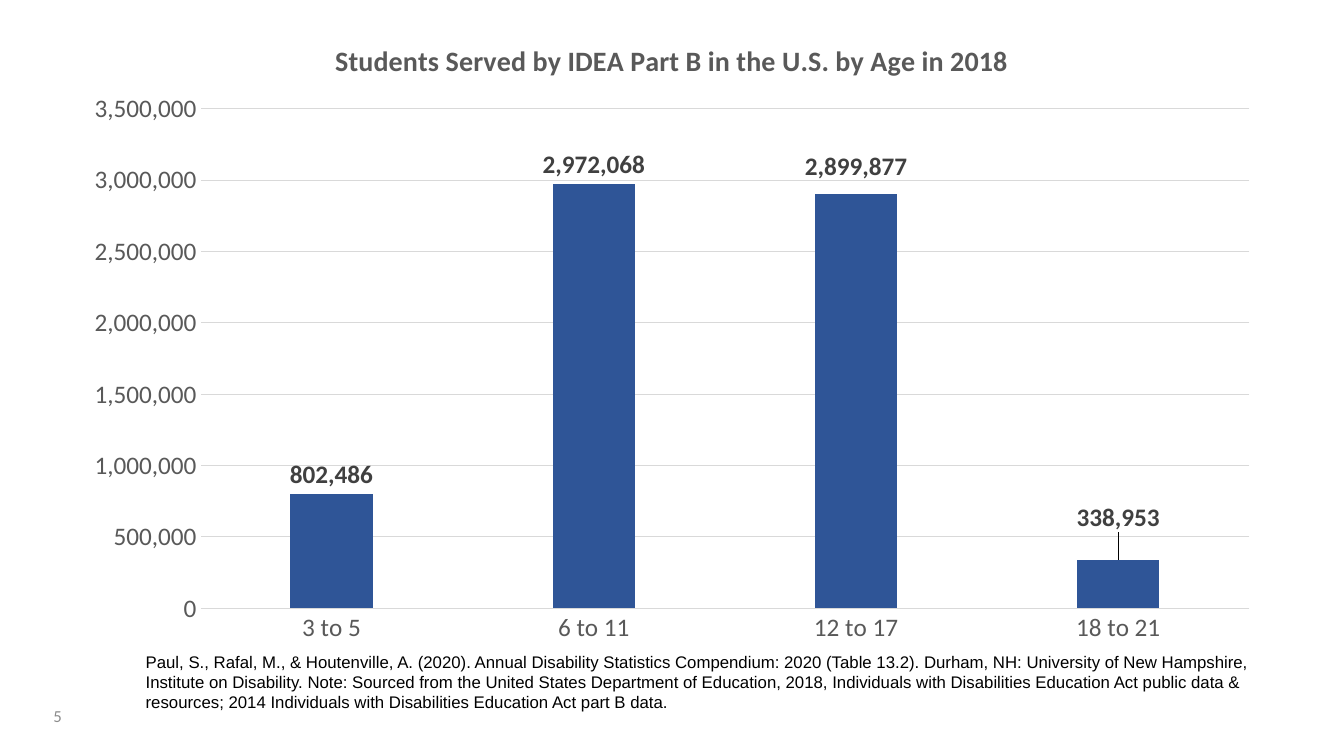
import pptx
import pptx.util
import pptx.dml.color
import pptx.chart.data
import pptx.enum.chart
import pptx.enum.text
import pptx.oxml
import pptx.oxml.ns

WIDE, HIGH = 13.33, 7.5
COLORS = {"bar": "2F5597", "grid": "D9D9D9", "axis": "595959",
          "label": "404040", "page": "8C8C8C", "note": "000000"}
AGES = ["3 to 5", "6 to 11", "12 to 17", "18 to 21"]
COUNTS = [802486, 2972068, 2899877, 338953]
LIFTS = {2: -0.014, 3: -0.036}  # extra label offsets, as shares of chart height
TITLE = "Students Served by IDEA Part B in the U.S. by Age in 2018"
NOTE = (
    "Paul, S., Rafal, M., & Houtenville, A. (2020). Annual Disability Statistics "
    "Compendium: 2020 (Table 13.2). Durham, NH: University of New Hampshire, "
    "Institute on Disability. Note: Sourced from the United States Department of "
    "Education, 2018, Individuals with Disabilities Education Act public data & "
    "resources; 2014 Individuals with Disabilities Education Act part B data.")


def color(name):
    return pptx.dml.color.RGBColor.from_string(COLORS[name])


def area(left, top, width, height):
    """Turn shares of the slide into lengths."""
    return [pptx.util.Inches(share * side) for share, side in
            zip((left, top, width, height), (WIDE, HIGH, WIDE, HIGH))]


def style(font, size, tint, bold=False, face="Calibri"):
    font.name, font.bold = face, bold
    font.size = pptx.util.Pt(size)
    font.color.rgb = color(tint)


def write(slide, text, box, size=12, tint="note", face="Arial",
          align="LEFT", anchor="TOP", after=0):
    frame = slide.shapes.add_textbox(*area(*box)).text_frame
    frame.word_wrap = True
    frame.vertical_anchor = getattr(pptx.enum.text.MSO_ANCHOR, anchor)
    para = frame.paragraphs[0]
    para.alignment = getattr(pptx.enum.text.PP_ALIGN, align)
    para.space_after = pptx.util.Pt(after)
    run = para.add_run()
    run.text = text
    style(run.font, size, tint, face=face)


def place(node, index, **parts):
    """Give a chart part a manual layout."""
    for old in node.findall(pptx.oxml.ns.qn("c:layout")):
        node.remove(old)
    tags = "".join(f'<c:{tag} val="{val}"/>' for tag, val in parts.items())
    node.insert(index, pptx.oxml.parse_xml(
        f'<c:layout {pptx.oxml.ns.nsdecls("c")}>'
        f'<c:manualLayout>{tags}</c:manualLayout></c:layout>'))


def rule(line):
    line.color.rgb = color("grid")
    line.width = pptx.util.Pt(0.75)


def set_axes(chart):
    none = pptx.enum.chart.XL_TICK_MARK.NONE
    for axis in (chart.category_axis, chart.value_axis):
        axis.major_tick_mark = axis.minor_tick_mark = none
        style(axis.tick_labels.font, 18, "axis")
    rule(chart.category_axis.format.line)
    axis = chart.value_axis
    axis.minimum_scale, axis.maximum_scale = 0, 3500000
    axis.major_unit = 500000
    axis.format.line.fill.background()
    rule(axis.major_gridlines.format.line)
    axis.tick_labels.number_format = "#,##0"
    axis.tick_labels.number_format_is_linked = False


def set_bars(plot):
    plot.gap_width, plot.overlap = 219, -27
    plot.vary_by_categories = False
    bars = plot.series[0]
    bars.format.fill.solid()
    bars.format.fill.fore_color.rgb = color("bar")
    outer = pptx.enum.chart.XL_LABEL_POSITION.OUTSIDE_END
    labels = bars.data_labels
    labels.show_value = True
    labels.number_format = "#,##0"
    labels.number_format_is_linked = False
    labels.position = outer
    style(labels.font, 18, "label", bold=True)
    # Raised labels
    for index, lift in LIFTS.items():
        label = bars.points[index].data_label
        label.position = outer
        style(label.font, 18, "label", bold=True)
        node = labels._element.xpath(f"c:dLbl[c:idx/@val='{index}']")[0]
        place(node, 1, x=0, y=lift)


def add_bars(slide, box):
    data = pptx.chart.data.CategoryChartData(number_format="#,##0")
    data.categories = AGES
    data.add_series("Series 1", COUNTS)
    kind = pptx.enum.chart.XL_CHART_TYPE.COLUMN_CLUSTERED
    chart = slide.shapes.add_chart(kind, *area(*box), data).chart
    style(chart.font, 10, "note")
    chart.has_legend = False
    chart.has_title = True
    para = chart.chart_title.text_frame.paragraphs[0]
    run = para.add_run()
    run.text = TITLE
    style(run.font, 20, "axis", bold=True)
    chart.chart_title.include_in_layout = False
    set_axes(chart)
    set_bars(chart.plots[0])
    plot = chart._chartSpace.chart.plotArea
    place(plot, 0, layoutTarget="inner", xMode="edge", yMode="edge",
          x=0.108, y=0.142, w=0.872, h=0.783)


def main():
    deck = pptx.Presentation()
    deck.slide_width = pptx.util.Inches(WIDE)
    deck.slide_height = pptx.util.Inches(HIGH)
    slide = deck.slides.add_slide(deck.slide_layouts[6])
    # Page number
    write(slide, "5", (0.0225, 0.92, 0.031, 0.053), tint="page",
          face="Calibri", align="RIGHT", anchor="MIDDLE", after=6)
    # Chart
    add_bars(slide, (0.0525, 0.024, 0.895, 0.844))
    # Source note
    write(slide, NOTE, (0.101, 0.855, 0.8365, 0.095))
    deck.save("out.pptx")


if __name__ == "__main__":
    main()
